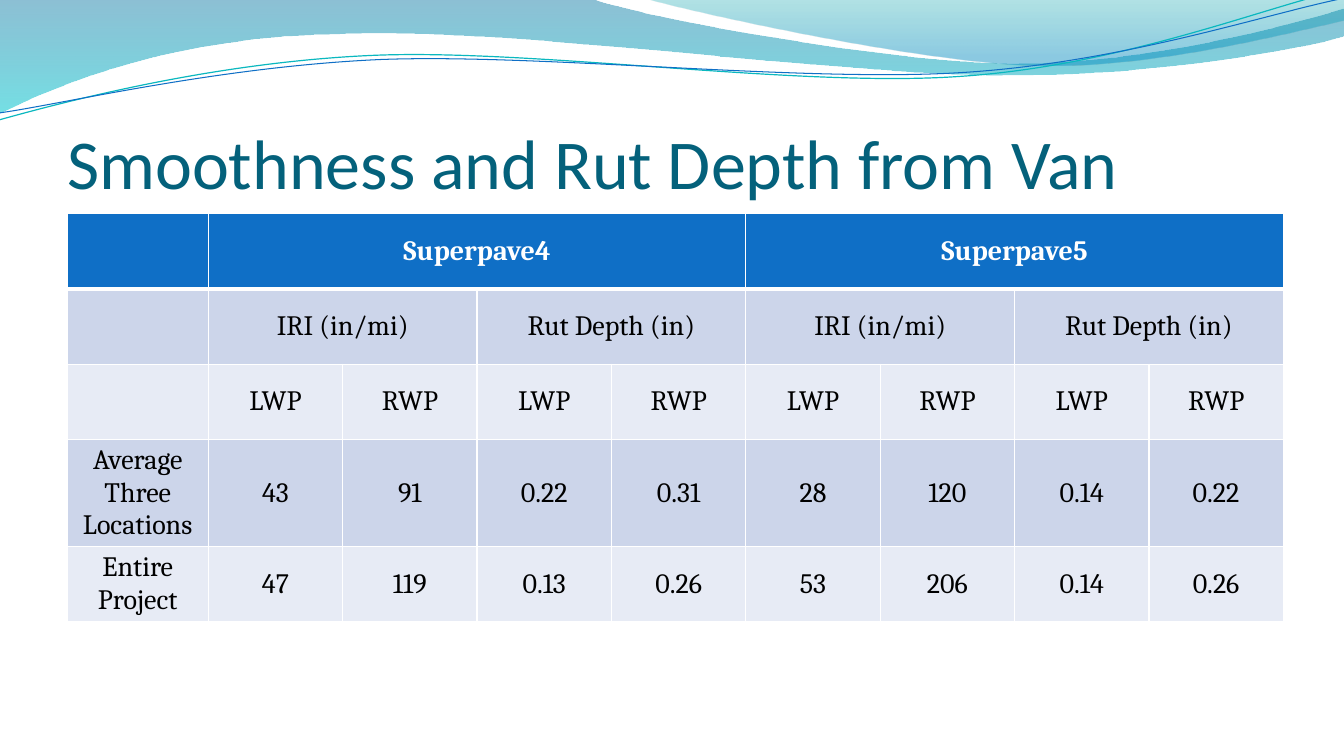
from dataclasses import dataclass
from math import cos, radians, sin

from lxml.etree import SubElement
from pptx import Presentation
from pptx.dml.color import RGBColor
from pptx.enum.text import MSO_ANCHOR, MSO_AUTO_SIZE, PP_ALIGN
from pptx.oxml.ns import qn
from pptx.shapes.autoshape import Shape
from pptx.slide import Slide
from pptx.table import _Cell
from pptx.text.text import TextFrame
from pptx.util import Pt

Point = tuple[float, float]


@dataclass(frozen=True)
class Theme:
    title_font: str = "Calibri"
    body_font: str = "Cambria"
    title_size: float = 50
    body_size: float = 20
    title: str = "04617B"
    header: str = "0F6FC6"
    bands: tuple[str, str] = ("CCD5EA", "E7EBF5")
    white: str = "FFFFFF"
    black: str = "000000"
    border: float = 1
    header_border: float = 3


@dataclass(frozen=True)
class Stop:
    position: float
    color: str
    opacity: int


@dataclass(frozen=True)
class Wave:
    """Outline whose segments hold one point (line) or three (cubic curve)."""
    start: Point
    segments: tuple[tuple[Point, ...], ...]
    stops: tuple[Stop, ...] = ()
    line_color: str = ""
    line_width: float = 0
    center: Point = (0, 0)
    rotation: float = 0


THEME = Theme()

WAVES = (
    Wave((0, 0), (
        ((422.6, -0.7),),
        ((456.5, 12.2), (637.2, 45.4), (727.9, 45.4)),
        ((819.4, 45.4), (920.2, 18.7), (959.8, 6.5)),
        ((961.2, 25.9),),
        ((943.9, 31.7), (835.2, 54.7), (715.7, 54)),
        ((596.9, 54), (366.5, 20.2), (247, 24.5)),
        ((123.8, 25.9), (43.9, 59.8), (-0.7, 81.4)),
        ((0, 0),),
    ), stops=(Stop(0, "0074A1", 45), Stop(1, "00C6CF", 55))),
    Wave((460.1, -0.7), (
        ((488.9, 7.9), (654.5, 44.6), (738, 46.8)),
        ((821.5, 49.7), (923, 23), (959.8, 15.1)),
        ((959.8, 0),),
        ((460.1, -0.7),),
    ), stops=(Stop(0, "00A1A9", 30), Stop(0.8, "008BBF", 45))),
    Wave((-0.7, 85.7), (
        ((46.1, 72.7), (151.9, 44.6), (265.7, 39.6)),
        ((379.4, 34.6), (568.8, 62.6), (684, 54.7)),
        ((799.2, 47.5), (901.4, 5.8), (958.3, -7.2)),
    ), line_color="0AB8BF", line_width=0.85, center=(478.8, 41.4), rotation=-2.7),
    Wave((0, 80.6), (
        ((45.4, 74.2), (157, 47.5), (272.2, 42.5)),
        ((386.6, 38.2), (573.1, 59), (687.6, 51.8)),
        ((802.8, 44.6), (903.6, 10.1), (960.5, -1.4)),
    ), line_color="0F6FC6", line_width=0.75, center=(480.2, 42.5), rotation=-2.7),
)

MIXES = ("Superpave4", "Superpave5")
MEASURES = ("IRI (in/mi)", "Rut Depth (in)")
WHEEL_PATHS = ("LWP", "RWP")
RESULTS = (
    ("Average Three Locations", "43", "91", "0.22", "0.31", "28", "120", "0.14", "0.22"),
    ("Entire Project", "47", "119", "0.13", "0.26", "53", "206", "0.14", "0.26"),
)


def rgb(color: str) -> RGBColor:
    return RGBColor.from_string(color)


def write(frame: TextFrame, text: str, *, font: str, size: float, color: str,
          bold: bool = False, align: PP_ALIGN = PP_ALIGN.LEFT) -> None:
    para = frame.paragraphs[0]
    para.alignment = align
    span = para.add_run()
    span.text = text
    span.font.name = font
    span.font.size = Pt(size)
    span.font.bold = bold
    span.font.color.rgb = rgb(color)


def unrotate(point: Point, wave: Wave) -> tuple[Pt, Pt]:
    """Undo the wave's rotation, which the shape itself applies again."""
    angle = radians(-wave.rotation)
    x, y = point[0] - wave.center[0], point[1] - wave.center[1]
    return (Pt(wave.center[0] + x * cos(angle) - y * sin(angle)),
            Pt(wave.center[1] + x * sin(angle) + y * cos(angle)))


def bend_segments(shape: Shape, wave: Wave) -> None:
    """Join the three straight steps of each cubic segment into one curve."""
    steps = iter(list(shape._element.iter(qn("a:lnTo"))))
    for segment in wave.segments:
        parts = [next(steps) for _ in segment]
        if len(parts) == 3:
            curve = parts[0].makeelement(qn("a:cubicBezTo"))
            parts[0].addprevious(curve)
            for part in parts:
                curve.append(part[0])
                part.getparent().remove(part)


def draw_wave(page: Slide, wave: Wave) -> None:
    points = [unrotate(point, wave) for segment in wave.segments for point in segment]
    builder = page.shapes.build_freeform(*unrotate(wave.start, wave))
    builder.add_line_segments(points, close=bool(wave.stops))
    shape = builder.convert_to_shape()
    bend_segments(shape, wave)
    shape.rotation = wave.rotation
    shape.shadow.inherit = False
    if not wave.stops:
        shape.fill.background()
        shape.line.color.rgb = rgb(wave.line_color)
        shape.line.width = Pt(wave.line_width)
        return
    shape.line.fill.background()
    shape.fill.gradient()
    shape.fill.gradient_angle = 270
    for target, stop in zip(shape.fill.gradient_stops, wave.stops):
        target.position = stop.position
        target.color.rgb = rgb(stop.color)
    colors = list(shape._element.spPr.iter(qn("a:srgbClr")))
    for color, stop in zip(colors, wave.stops):
        SubElement(color, qn("a:alpha"), val=str(stop.opacity * 1000))


def draw_title(page: Slide, text: str) -> None:
    title = page.shapes.title
    title.left, title.top, title.width, title.height = Pt(48), Pt(55.4), Pt(864), Pt(90)
    frame = title.text_frame
    frame.word_wrap = True
    frame.auto_size = MSO_AUTO_SIZE.NONE
    frame.vertical_anchor = MSO_ANCHOR.BOTTOM
    frame.margin_left = frame.margin_right = frame.margin_bottom = 0
    frame.margin_top = Pt(3.6)
    write(frame, text, font=THEME.title_font, size=THEME.title_size, color=THEME.title)


def set_borders(cell: _Cell, top: float, bottom: float) -> None:
    widths = {"a:lnL": THEME.border, "a:lnR": THEME.border, "a:lnT": top, "a:lnB": bottom}
    properties = cell._tc.get_or_add_tcPr()
    for tag, width in widths.items():
        line = SubElement(properties, qn(tag), w=str(Pt(width)))
        SubElement(SubElement(line, qn("a:solidFill")), qn("a:srgbClr"), val=THEME.white)


def table_rows() -> list[list[str]]:
    """Give the text of every cell, with blanks where a heading spans."""
    mixes, measures, sides = [""], [""], [""]
    for mix in MIXES:
        mixes += [mix, "", "", ""]
        for measure in MEASURES:
            measures += [measure, ""]
            sides += WHEEL_PATHS
    return [mixes, measures, sides, *map(list, RESULTS)]


def draw_table(page: Slide) -> None:
    rows = table_rows()
    count = len(rows[0])
    table = page.shapes.add_table(len(rows), count, Pt(48), Pt(152.6),
                                  Pt(868.8), Pt(53.8 * len(rows))).table
    table.first_row = table.horz_banding = False
    for index, column in enumerate(table.columns):
        column.width = Pt(96 if index else 100.8)
    for row, texts in enumerate(rows):
        for column, text in enumerate(texts):
            cell = table.cell(row, column)
            set_borders(cell,
                        top=THEME.header_border if row == 1 else THEME.border,
                        bottom=THEME.header_border if row == 0 else THEME.border)
            cell.fill.solid()
            cell.fill.fore_color.rgb = rgb(THEME.bands[(row - 1) % 2] if row else THEME.header)
            cell.vertical_anchor = MSO_ANCHOR.MIDDLE
            if text:
                write(cell.text_frame, text, font=THEME.body_font, size=THEME.body_size,
                      color=THEME.black if row else THEME.white, bold=row == 0,
                      align=PP_ALIGN.CENTER)
    for row, span in ((0, 4), (1, 2)):
        for column in range(1, count, span):
            table.cell(row, column).merge(table.cell(row, column + span - 1))


def main() -> None:
    deck = Presentation()
    deck.slide_width, deck.slide_height = Pt(960), Pt(540)
    page = deck.slides.add_slide(deck.slide_layouts[5])
    for wave in WAVES:
        draw_wave(page, wave)
    draw_title(page, "Smoothness and Rut Depth from Van")
    draw_table(page)
    deck.save("out.pptx")


if __name__ == "__main__":
    main()
